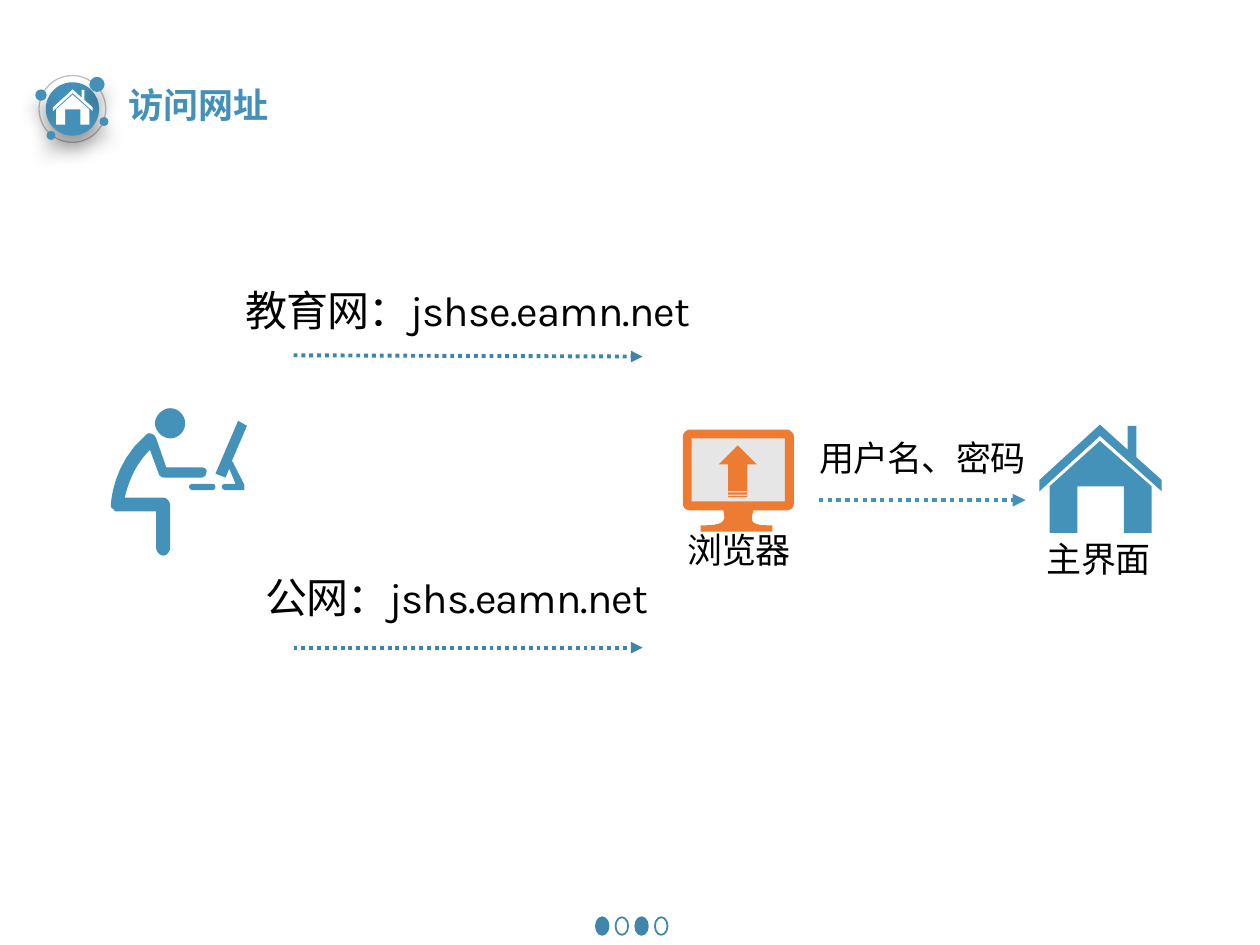
from lxml import etree
from pptx import Presentation
from pptx.dml.color import RGBColor
from pptx.enum.dml import MSO_LINE
from pptx.enum.shapes import MSO_CONNECTOR, MSO_SHAPE
from pptx.enum.text import MSO_ANCHOR, MSO_AUTO_SIZE, PP_ALIGN
from pptx.oxml.ns import qn
from pptx.util import Inches, Pt

OVAL, RECT, UP_ARROW = MSO_SHAPE.OVAL, MSO_SHAPE.RECTANGLE, MSO_SHAPE.STRIPED_RIGHT_ARROW
COLORS = {name: RGBColor.from_string(value) for name, value in {
    "blue": "4490B9", "icon": "4491B9", "arrow": "3E85AA", "pager": "3F86AB",
    "orange": "ED7B31", "screen": "E7E6E6", "ring": "BFBFBF",
    "white": "FFFFFF", "black": "000000"}.items()}
CJK_FONT, LATIN_FONT = "Noto Sans CJK SC", "Karla"

prs = Presentation()
prs.slide_width, prs.slide_height = Inches(10), Inches(7.5)
slide = prs.slides.add_slide(prs.slide_layouts[5])
shapes = slide.shapes


def add_outline(contours, fill, left=0, top=0, scale=1):
    """Draw closed contours; a 2-tuple is a corner, a 6-tuple a Bezier curve."""
    builder = None
    for start, *segments in contours:
        points, (x, y) = [], start
        for segment in segments:
            if len(segment) == 2:
                points.append(segment)
            else:
                x1, y1, x2, y2, x3, y3 = segment
                for t in (i / 8 for i in range(1, 9)):
                    a, b, c, d = (1 - t) ** 3, 3 * t * (1 - t) ** 2, 3 * t * t * (1 - t), t ** 3
                    points.append((a * x + b * x1 + c * x2 + d * x3,
                                   a * y + b * y1 + c * y2 + d * y3))
            x, y = segment[-2:]
        (x0, y0), *rest = [(Inches(left + px * scale), Inches(top + py * scale))
                           for px, py in [start, *points]]
        if builder is None:
            builder = shapes.build_freeform(x0, y0)
        else:
            builder.move_to(x0, y0)
        builder.add_line_segments(rest, close=True)
    outline = builder.convert_to_shape()
    outline.shadow.inherit = False
    outline.fill.solid()
    outline.fill.fore_color.rgb = COLORS[fill]
    outline.line.fill.background()


def style_run(run, font_name, size, color):
    run.font.name, run.font.size = font_name, Pt(size)
    run.font.color.rgb = COLORS[color]
    east_asian = etree.SubElement(run.font._element, qn("a:ea"))
    east_asian.set("typeface", CJK_FONT)


# Title
title = shapes.title
title.left, title.top, title.width, title.height = map(Inches, (0.92, 0.61, 1.32, 0.44))
title.text_frame.text = "访问网址"
title.text_frame.word_wrap = False
title.text_frame.auto_size = MSO_AUTO_SIZE.NONE
title.text_frame.vertical_anchor = MSO_ANCHOR.MIDDLE
title.text_frame.paragraphs[0].alignment = PP_ALIGN.LEFT
style_run(title.text_frame.paragraphs[0].runs[0], CJK_FONT, 20, "blue")
title.text_frame.paragraphs[0].runs[0].font.bold = True

# Page dots, title badge and browser screen: kind, box, fill, line, line width, shadow
pager = [(OVAL, (4.73 + 0.156 * i, 7.28, 0.1, 0.14), None if i % 2 else "pager", "pager", 1, False)
         for i in range(4)]
badge_dots = [(OVAL, (x, y, d, d), "blue", None, 0, True)
              for x, y, d in [(0.71, 0.61, 0.12), (0.28, 0.71, 0.09),
                              (0.37, 1.04, 0.07), (0.79, 0.93, 0.07)]]
presets = pager + [
    (OVAL, (0.31, 0.6, 0.53, 0.53), None, "ring", 0.75, False),
    (OVAL, (0.37, 0.66, 0.41, 0.41), "blue", "icon", 1, True),
    *badge_dots,
    (RECT, (5.48, 3.46, 0.78, 0.53), "screen", None, 0, False),
    (UP_ARROW, (5.65, 3.59, 0.41, 0.3), "orange", None, 0, False),
]
for kind, box, fill, line, line_width, shadowed in presets:
    preset = shapes.add_shape(kind, *map(Inches, box))
    preset.shadow.inherit = False
    if fill:
        preset.fill.solid()
        preset.fill.fore_color.rgb = COLORS[fill]
    else:
        preset.fill.background()
    if line:
        preset.line.color.rgb = COLORS[line]
        preset.line.width = Pt(line_width)
    else:
        preset.line.fill.background()
    if kind == UP_ARROW:
        preset.rotation = 270
    if shadowed:
        effects = preset._element.spPr.find(qn("a:effectLst"))
        shadow = etree.SubElement(effects, qn("a:outerShdw"), blurRad=str(Pt(11)),
                                  dist=str(Pt(8)), dir="5400000", rotWithShape="0")
        shade = etree.SubElement(shadow, qn("a:srgbClr"), val="000000")
        etree.SubElement(shade, qn("a:alpha"), val="40000")

# Icons
house = [
    [(0.48, 0.13), (0.89, 0.49), (0.89, 0.86), (0.67, 0.86), (0.67, 0.49),
     (0.3, 0.49), (0.3, 0.86), (0.08, 0.86), (0.08, 0.49)],
    [(0.48, 0), (0.7, 0.2), (0.7, 0.01), (0.77, 0.01), (0.77, 0.26), (0.97, 0.44),
     (0.97, 0.53), (0.48, 0.09), (0, 0.53), (0, 0.44)],
]
add_outline(house, "white", 0.42, 0.71, 0.325)
add_outline(house, "icon", 8.25, 3.37)

monitor = [
    [(6.25, 3.41), (5.47, 3.41), (5.45, 3.41, 5.42, 3.44, 5.42, 3.46), (5.42, 4),
     (5.42, 4.03, 5.45, 4.05, 5.47, 4.05), (5.74, 4.05), (5.77, 4.15, 5.73, 4.17, 5.56, 4.17),
     (5.56, 4.22), (6.13, 4.22), (6.13, 4.17), (5.96, 4.17, 5.95, 4.15, 5.98, 4.05),
     (6.25, 4.05), (6.27, 4.05, 6.3, 4.03, 6.3, 4), (6.3, 3.46),
     (6.3, 3.44, 6.27, 3.41, 6.25, 3.41)],
    [(6.23, 3.48), (6.23, 3.98), (5.49, 3.98), (5.49, 3.48)],
]
add_outline(monitor, "orange")

body = [
    (1.3, 3.95), (0.99, 3.95), (1.01, 3.87, 1.05, 3.71, 1.19, 3.57), (1.26, 3.76),
    (1.26, 3.77, 1.28, 3.79, 1.3, 3.79), (1.6, 3.79), (1.62, 3.79, 1.64, 3.77, 1.64, 3.74),
    (1.64, 3.72, 1.62, 3.71, 1.6, 3.71), (1.32, 3.71), (1.24, 3.48), (1.23, 3.46),
    (1.21, 3.44, 1.18, 3.43, 1.16, 3.45), (0.89, 3.68, 0.88, 4, 0.88, 4.01),
    (0.88, 4.02, 0.88, 4.03, 0.9, 4.04), (0.91, 4.06, 0.92, 4.06, 0.93, 4.06),
    (1.24, 4.06), (1.24, 4.35), (1.24, 4.38, 1.27, 4.41, 1.3, 4.41),
    (1.32, 4.41, 1.35, 4.38, 1.35, 4.35), (1.35, 4.01), (1.35, 3.98, 1.32, 3.95, 1.3, 3.95)]
head = [
    (1.35, 3.24), (1.42, 3.24, 1.47, 3.3, 1.47, 3.36), (1.47, 3.42, 1.42, 3.48, 1.35, 3.48),
    (1.29, 3.48, 1.23, 3.42, 1.23, 3.36), (1.23, 3.3, 1.29, 3.24, 1.35, 3.24)]
keyboard = [
    (1.68, 3.84), (1.53, 3.84), (1.52, 3.84, 1.5, 3.85, 1.5, 3.86),
    (1.5, 3.88, 1.52, 3.89, 1.53, 3.89), (1.68, 3.89),
    (1.7, 3.89, 1.71, 3.88, 1.71, 3.86), (1.71, 3.85, 1.7, 3.84, 1.68, 3.84)]
laptop = [
    (1.85, 3.67), (1.84, 3.66), (1.96, 3.38), (1.89, 3.34), (1.71, 3.76), (1.79, 3.79),
    (1.82, 3.72), (1.87, 3.84), (1.79, 3.84), (1.78, 3.84, 1.76, 3.85, 1.76, 3.86),
    (1.76, 3.88, 1.78, 3.89, 1.79, 3.89), (1.92, 3.89),
    (1.93, 3.89, 1.94, 3.89, 1.94, 3.88), (1.94, 3.87, 1.94, 3.86, 1.94, 3.85)]
add_outline([body, head, keyboard, laptop], "icon")

# Labels: text, box, font, size, whether the box has inner margins
labels = [
    ("教育网：jshse.eamn.net", (1.6, 2.25, 4.22, 0.48), LATIN_FONT, 24, True),
    ("公网：jshs.eamn.net", (1.89, 4.53, 3.47, 0.48), LATIN_FONT, 24, True),
    ("用户名、密码", (6.2, 3.45, 2.24, 0.48), CJK_FONT, 20, True),
    ("浏览器", (4.94, 4.23, 1.85, 0.3), CJK_FONT, 20, False),
    ("主界面", (8.02, 4.3, 1.4, 0.3), CJK_FONT, 20, False),
]
for text, box, font_name, size, has_margins in labels:
    frame = shapes.add_textbox(*map(Inches, box)).text_frame
    frame.word_wrap = True
    if not has_margins:
        frame.margin_left = frame.margin_right = frame.margin_top = frame.margin_bottom = 0
    frame.text = text
    paragraph = frame.paragraphs[0]
    paragraph.alignment, paragraph.line_spacing = PP_ALIGN.CENTER, 0.9
    style_run(paragraph.runs[0], font_name, size, "black")
    paragraph.runs[0].font._element.set("spc", "-50")

# Dotted arrows: start, end, colour, width
for start, end, color, width in [((2.33, 2.82), (5.1, 2.83), "arrow", 2.25),
                                 ((2.33, 5.14), (5.1, 5.14), "arrow", 2.25),
                                 ((6.5, 3.97), (8.14, 3.97), "icon", 2.5)]:
    route = shapes.add_connector(MSO_CONNECTOR.STRAIGHT, *map(Inches, start + end))
    route.line.color.rgb = COLORS[color]
    route.line.width = Pt(width)
    route.line.dash_style = MSO_LINE.ROUND_DOT
    etree.SubElement(route.line._get_or_add_ln(), qn("a:tailEnd"), type="triangle")
    etree.SubElement(route._element.spPr, qn("a:effectLst"))

prs.save("out.pptx")
